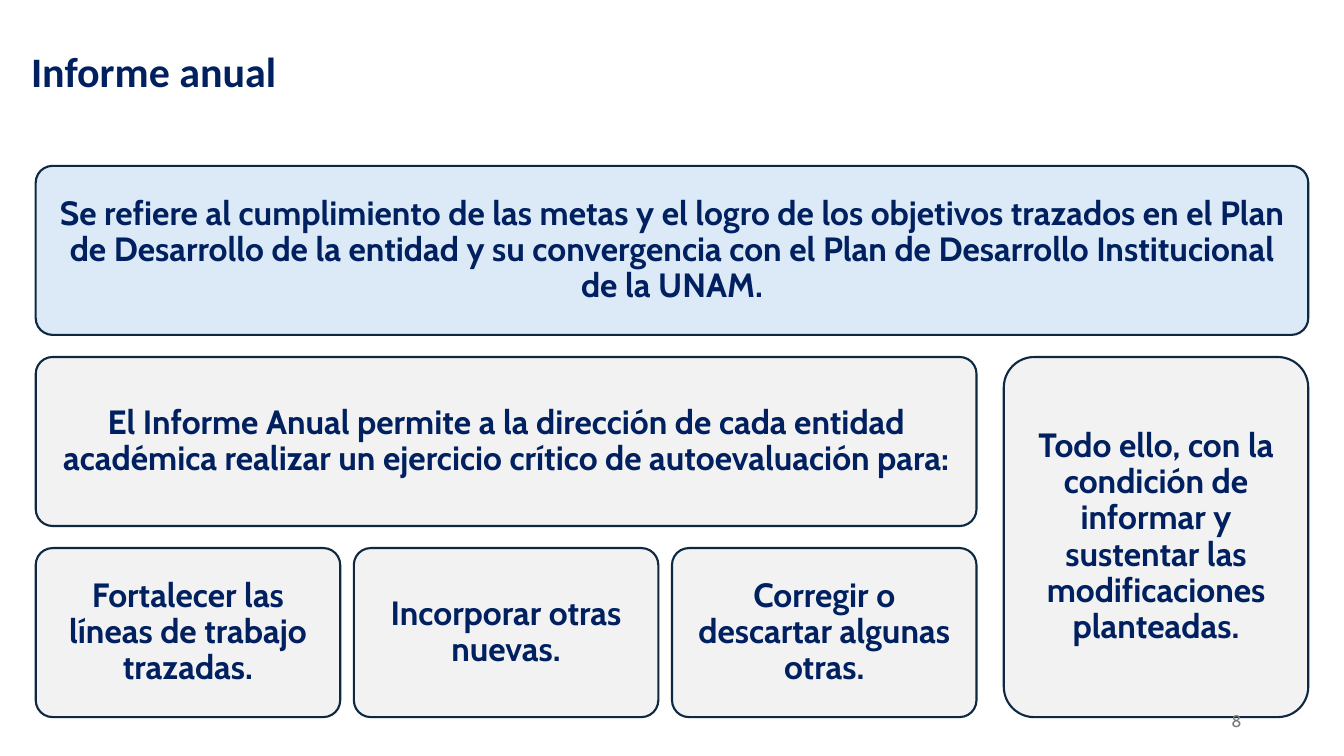
import pptx
import pptx.dml.color
import pptx.enum.shapes
import pptx.enum.text
import pptx.util

PX = 9525
COLORS = {"navy": "002060", "border": "0E2841", "blue": "DCEAF7",
          "gray": "F2F2F2", "number": "797979"}
ALIGN = pptx.enum.text.PP_ALIGN
ANCHOR = pptx.enum.text.MSO_ANCHOR


def rgb(name):
    return pptx.dml.color.RGBColor.from_string(COLORS[name])


class Deck:
    """Holds the style and the current slide, and adds its elements."""

    def __init__(self, width, height):
        self.prs = pptx.Presentation()
        self.prs.slide_width = width * PX
        self.prs.slide_height = height * PX
        self.slide = self.prs.slides.add_slide(self.prs.slide_layouts[5])

    def set_text(self, sp, text, size, color, align, anchor, font="Cabin",
                 bold=True, spacing=0.9):
        tf = sp.text_frame
        tf.word_wrap = True
        tf.auto_size = pptx.enum.text.MSO_AUTO_SIZE.NONE
        tf.vertical_anchor = anchor
        tf.text = text
        p = tf.paragraphs[0]
        p.alignment = align
        p.line_spacing = spacing
        p.font.name = font
        p.font.size = pptx.util.Pt(size)
        p.font.bold = bold
        p.font.color.rgb = rgb(color)

    def title(self, text, x, y, w, h):
        sp = self.slide.shapes.title
        sp.left, sp.top, sp.width, sp.height = (v * PX for v in (x, y, w, h))
        self.set_text(sp, text, 30, "navy", ALIGN.LEFT, ANCHOR.BOTTOM, "Calibri")

    def card(self, text, x, y, w, h, fill="gray"):
        sp = self.slide.shapes.add_shape(
            pptx.enum.shapes.MSO_SHAPE.ROUNDED_RECTANGLE,
            x * PX, y * PX, w * PX, h * PX)
        sp.adjustments[0] = 0.1
        sp.shadow.inherit = False
        sp.fill.solid()
        sp.fill.fore_color.rgb = rgb(fill)
        sp.line.color.rgb = rgb("border")
        sp.line.width = pptx.util.Pt(1.5)
        tf = sp.text_frame
        tf.margin_left = tf.margin_right = 14 * PX
        tf.margin_top = tf.margin_bottom = 14 * PX
        self.set_text(sp, text, 24, "navy", ALIGN.CENTER, ANCHOR.MIDDLE)

    def page_number(self, text, x, y, w, h):
        sp = self.slide.shapes.add_textbox(x * PX, y * PX, w * PX, h * PX)
        self.set_text(sp, text, 12, "number", ALIGN.RIGHT, ANCHOR.MIDDLE,
                      bold=False, spacing=1.0)


def main():
    deck = Deck(1280, 720)
    deck.title("Informe anual", 20, 3, 884, 94)

    left, top, card_w, card_h = 34, 158, 290, 161
    row_step, column_step = 182, 303
    middle, bottom = top + row_step, top + 2 * row_step
    side = 956
    deck.card("Se refiere al cumplimiento de las metas y el logro de los "
              "objetivos trazados en el Plan de Desarrollo de la entidad y su "
              "convergencia con el Plan de Desarrollo Institucional de la UNAM.",
              left, top, side + card_w - left, card_h, "blue")
    deck.card("Todo ello, con la condición de informar y sustentar las "
              "modificaciones planteadas.",
              side, middle, card_w, row_step + card_h)
    deck.card("El Informe Anual permite a la dirección de cada entidad "
              "académica realizar un ejercicio crítico de autoevaluación para:",
              left, middle, 2 * column_step + card_w, card_h)
    purposes = ["Fortalecer las líneas de trabajo trazadas.",
                "Incorporar otras nuevas.",
                "Corregir o descartar algunas otras."]
    for i, purpose in enumerate(purposes):
        deck.card(purpose, left + i * column_step, bottom, card_w, card_h)

    deck.page_number("8", 904, 667, 288, 38)
    deck.prs.save("out.pptx")


if __name__ == "__main__":
    main()
